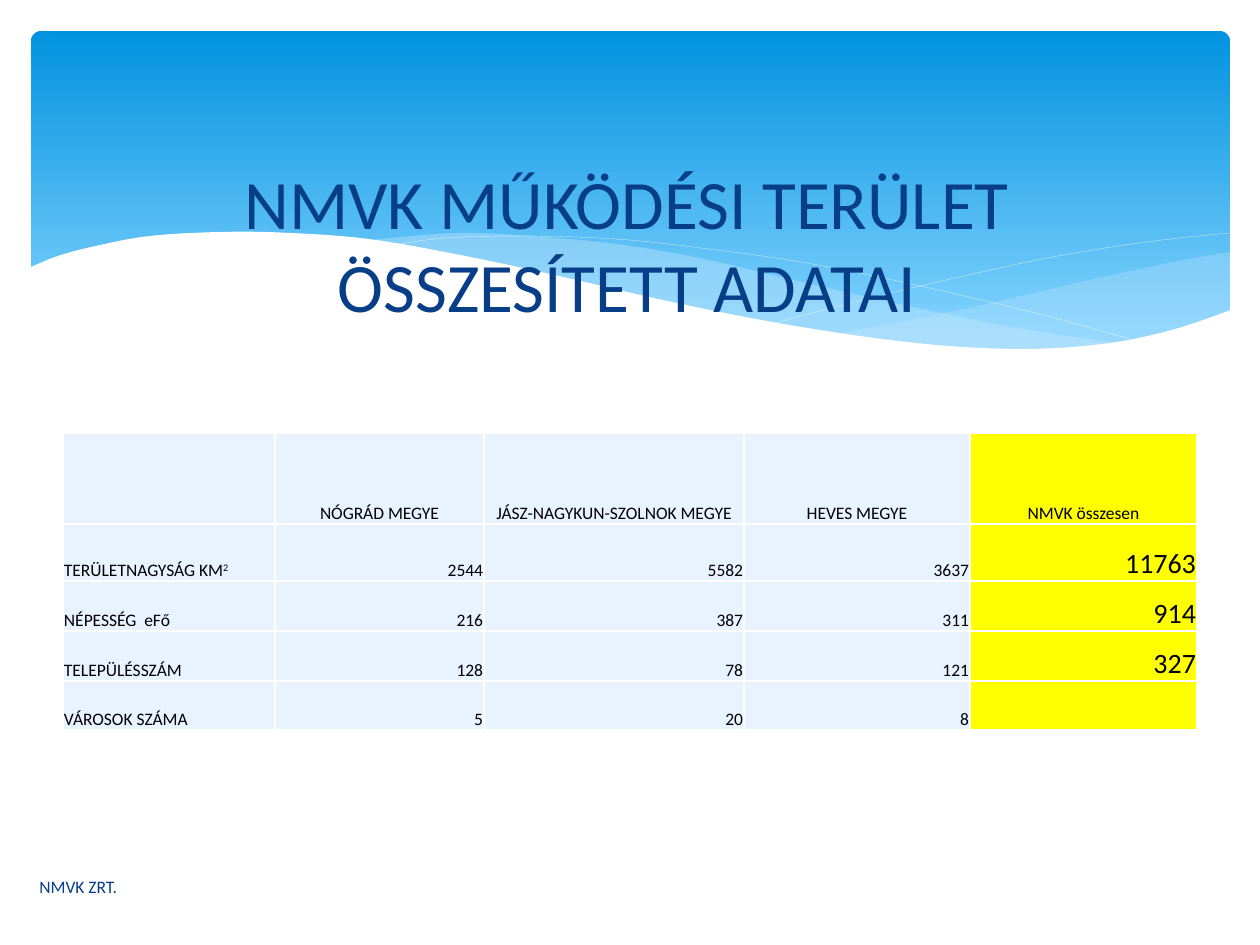
from lxml.etree import SubElement
from pptx import Presentation
from pptx.dml.color import RGBColor
from pptx.enum.shapes import MSO_SHAPE
from pptx.enum.text import MSO_ANCHOR, PP_ALIGN
from pptx.oxml.ns import qn
from pptx.util import Emu, Pt

FONT = "Calibri"
COMPANY = "NMVK"
NAVY, WHITE, BLACK = "073E87", "FFFFFF", "000000"
PALE, YELLOW, MIST = "E8F3FF", "FFFF00", "C6E7FC"

FAN = [
    [(1199, 221), (1147, 230), (1054, 250), (951, 274), (859, 293), (802, 303)],
    [(802, 303), (875, 312), (938, 318), (995, 319), (1056, 316), (1119, 305),
     (1165, 293), (1199, 280)],
]
BAND = [
    [(1094, 313), (986, 297), (859, 271), (762, 249), (668, 227), (585, 213),
     (498, 205), (424, 202), (329, 210)],
    [(329, 210), (425, 225), (535, 249), (637, 271), (748, 294), (845, 309),
     (928, 318), (1012, 319), (1094, 313)],
]
FALLING_LINE = [(358, 215), (414, 207), (493, 205), (585, 208), (670, 217),
                (770, 231), (885, 254), (1016, 285), (1112, 312)]
RISING_LINE = [(741, 293), (816, 273), (911, 250), (1022, 226), (1116, 211), (1198, 202)]
FRONT_WAVE = [
    [(1200, 279), (1141, 299), (1072, 313), (988, 318), (884, 312), (758, 294),
     (636, 270), (532, 246), (429, 224), (337, 208), (259, 202), (192, 201),
     (119, 205), (65, 215), (27, 225), (-2, 237)],
    [(-2, 384), (1200, 384)],
]

COLUMNS = [212, 209, 260, 226, 227]
ROWS = [91, 57, 50, 50, 49]
DATA = [
    ["", "NÓGRÁD MEGYE", "JÁSZ-NAGYKUN-SZOLNOK MEGYE", "HEVES MEGYE", f"{COMPANY} összesen"],
    ["TERÜLETNAGYSÁG KM", "2544", "5582", "3637", "11763"],
    ["NÉPESSÉG  eFő", "216", "387", "311", "914"],
    ["TELEPÜLÉSSZÁM", "128", "78", "121", "327"],
    ["VÁROSOK SZÁMA", "5", "20", "8", ""],
]


def px(length):
    return Emu(round(length * 914400 / 126))


def color(value):
    return RGBColor.from_string(value)


def style(paragraph, size, tint, align):
    paragraph.alignment = align
    for run in paragraph.runs:
        run.font.name = FONT
        run.font.size = Pt(size)
        run.font.color.rgb = color(tint)


def smooth(points, steps=6):
    if len(points) < 3:
        return points
    padded = [points[0], *points, points[-1]]
    curve = []
    for a, b, c, d in zip(padded, padded[1:], padded[2:], padded[3:]):
        for step in range(steps):
            t = step / steps
            curve.append(tuple(
                q + t * (r - p + t * (2 * p - 5 * q + 4 * r - s + t * (3 * (q - r) + s - p))) / 2
                for p, q, r, s in zip(a, b, c, d)))
    return curve + [points[-1]]


def add_curve(slide, left, top, edges, closed):
    points = [(px(left + x), px(top + y)) for edge in edges for x, y in smooth(edge)]
    builder = slide.shapes.build_freeform(*points[0])
    builder.add_line_segments(points[1:], close=closed)
    curve = builder.convert_to_shape()
    curve.shadow.inherit = False
    return curve


def add_wave(slide, left, top, edges, tint, opacity=100):
    wave = add_curve(slide, left, top, edges, True)
    wave.fill.solid()
    wave.fill.fore_color.rgb = color(tint)
    wave.line.fill.background()
    if opacity < 100:
        tint_element = wave._element.spPr.find(qn("a:solidFill"))[0]
        SubElement(tint_element, qn("a:alpha"), val=str(opacity * 1000))


def add_hairline(slide, left, top, points):
    hairline = add_curve(slide, left, top, [points], False)
    hairline.fill.background()
    hairline.line.color.rgb = color(WHITE)
    hairline.line.width = Pt(0.1)


def add_header(slide, left, top, width, height):
    sky = slide.shapes.add_shape(
        MSO_SHAPE.ROUNDED_RECTANGLE, px(left), px(top), px(width), px(height))
    sky.adjustments[0] = 0.03
    sky.shadow.inherit = False
    sky.line.fill.background()
    sky.fill.gradient()
    sky.fill.gradient_angle = 270
    for stop, tint, position in zip(sky.fill.gradient_stops, ("0293E0", "83D3FE"), (0, 0.9)):
        stop.color.rgb = color(tint)
        stop.position = position
    add_wave(slide, left, top, FAN, MIST, 29)
    add_wave(slide, left, top, BAND, MIST, 40)
    add_hairline(slide, left, top, FALLING_LINE)
    add_hairline(slide, left, top, RISING_LINE)
    add_wave(slide, left, top, FRONT_WAVE, WHITE)


def add_label(slide, left, top, width, height, text, size, align):
    frame = slide.shapes.add_textbox(px(left), px(top), px(width), px(height)).text_frame
    frame.word_wrap = True
    frame.vertical_anchor = MSO_ANCHOR.MIDDLE
    frame.text = text
    style(frame.paragraphs[0], size, NAVY, align)


def add_borders(cell):
    properties = cell._tc.get_or_add_tcPr()
    for side in ("lnL", "lnR", "lnT", "lnB"):
        border = SubElement(properties, qn(f"a:{side}"), w=str(Pt(1)))
        fill = SubElement(border, qn("a:solidFill"))
        SubElement(fill, qn("a:srgbClr"), val=WHITE)


def fill_cell(cell, text, row, column):
    total = column == len(COLUMNS) - 1
    add_borders(cell)
    cell.fill.solid()
    cell.fill.fore_color.rgb = color(YELLOW if total else PALE)
    cell.margin_left = cell.margin_right = cell.margin_top = px(1)
    cell.margin_bottom = 0
    cell.vertical_anchor = MSO_ANCHOR.BOTTOM
    paragraph = cell.text_frame.paragraphs[0]
    paragraph.text = text
    if (row, column) == (1, 0):
        exponent = paragraph.add_run()
        exponent.text = "2"
        exponent._r.get_or_add_rPr().set("baseline", "30000")
    if row == 0:
        align = PP_ALIGN.CENTER
    else:
        align = PP_ALIGN.RIGHT if column else PP_ALIGN.LEFT
    style(paragraph, 16 if total and row else 10, BLACK, align)


def add_county_table(slide, left, top, width, height):
    table = slide.shapes.add_table(
        len(ROWS), len(COLUMNS), px(left), px(top), px(width), px(height)).table
    table.first_row = table.horz_banding = False
    for column, share in zip(table.columns, COLUMNS):
        column.width = px(width * share / sum(COLUMNS))
    for row, share in zip(table.rows, ROWS):
        row.height = px(height * share / sum(ROWS))
    for row, texts in enumerate(DATA):
        for column, text in enumerate(texts):
            fill_cell(table.cell(row, column), text, row, column)


def main():
    presentation = Presentation()
    presentation.slide_width = px(1260)
    presentation.slide_height = px(945)
    slide = presentation.slides.add_slide(presentation.slide_layouts[6])
    add_header(slide, 31, 31, 1199, 340)
    add_label(slide, 55, 164, 1144, 158, f"{COMPANY} MŰKÖDÉSI TERÜLET ÖSSZESÍTETT ADATAI",
              39.6, PP_ALIGN.CENTER)
    add_county_table(slide, 63, 433, 1134, 297)
    add_label(slide, 27, 862, 522, 50, f"{COMPANY} ZRT.", 10, PP_ALIGN.LEFT)
    presentation.save("out.pptx")


if __name__ == "__main__":
    main()
